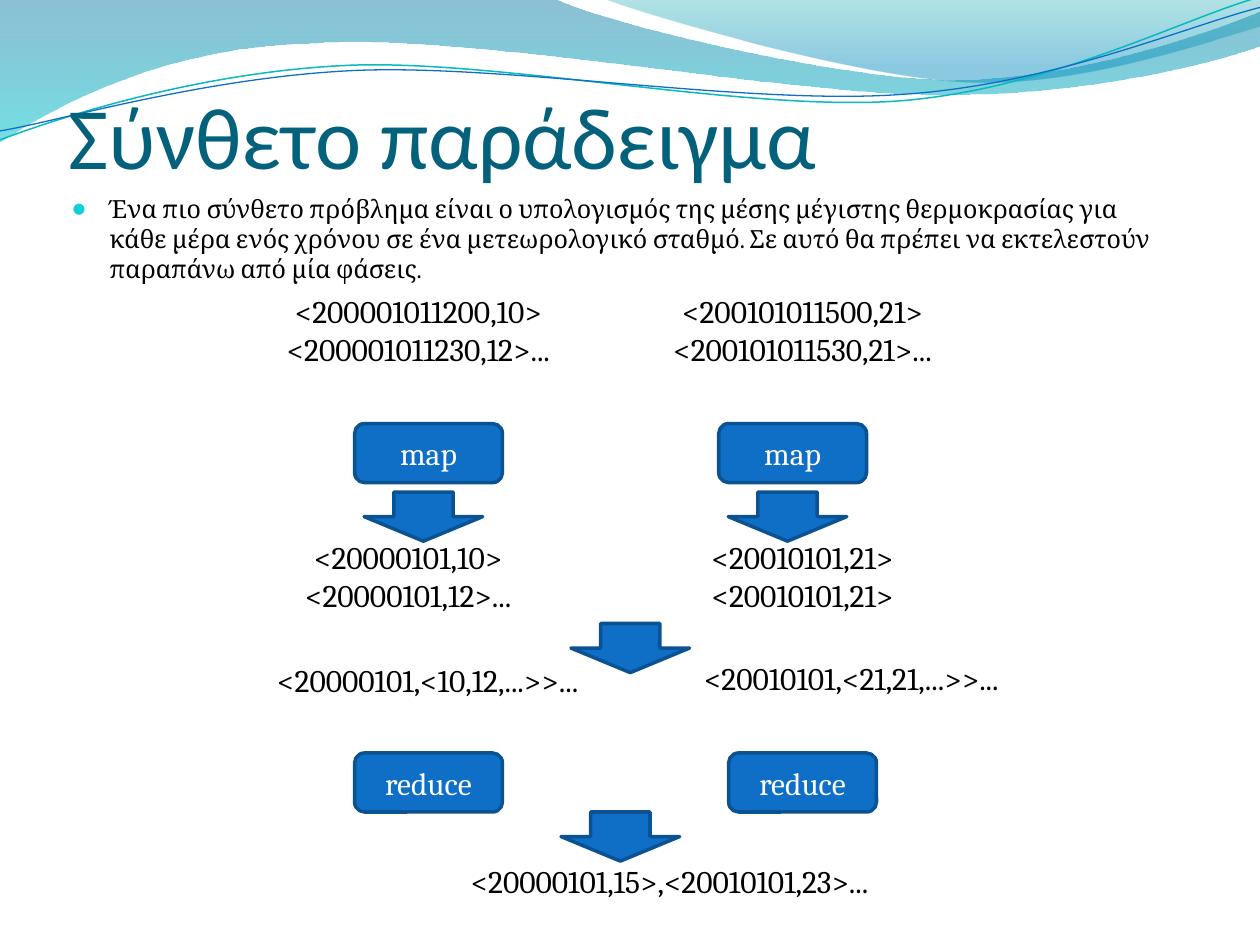
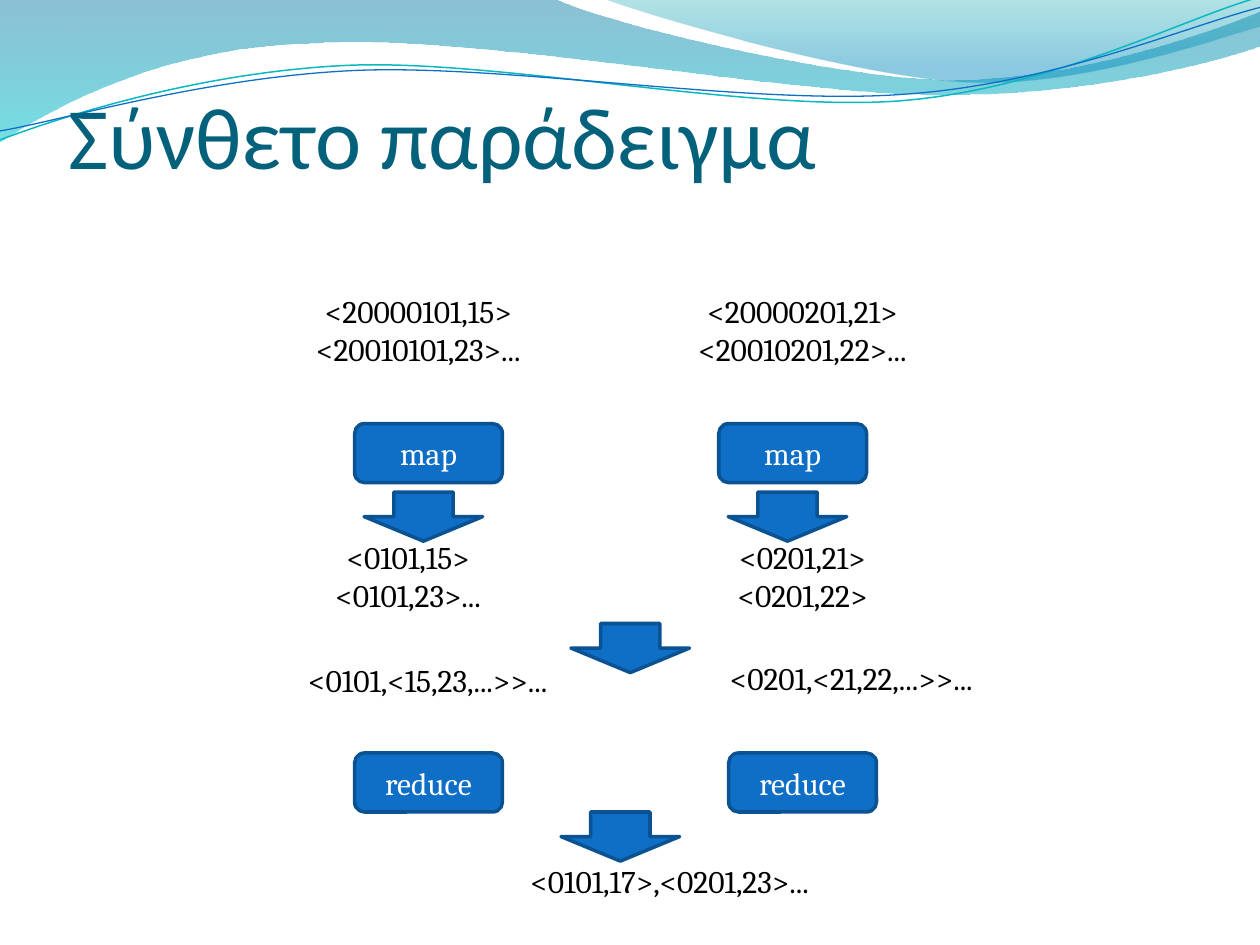
from typing import NamedTuple

from lxml.etree import SubElement
from pptx import Presentation
from pptx.dml.color import RGBColor
from pptx.enum.shapes import MSO_SHAPE as Preset
from pptx.enum.text import MSO_ANCHOR as Anchor, MSO_AUTO_SIZE as AutoSize, PP_ALIGN as Align
from pptx.oxml import parse_xml
from pptx.oxml.ns import nsdecls, qn
from pptx.util import Cm, Pt

BLUE, DARK_BLUE, AQUA, BULLET = "0F6FC6", "0B5292", "0AB8BF", "0BD0D9"
TITLE_COLOUR, BLACK, WHITE = "04617B", "000000", "FFFFFF"
TITLE_FONT, BODY_FONT = "Calibri", "Cambria"
STRAND_ROTATION = 357.3
TITLE = "Σύνθετο παράδειγμα"
INTRO = (
    "Ένα πιο σύνθετο πρόβλημα είναι ο υπολογισμός της μέσης μέγιστης θερμοκρασίας "
    "για κάθε μέρα ενός χρόνου σε ένα μετεωρολογικό σταθμό. Σε αυτό θα πρέπει να "
    "εκτελεστούν παραπάνω από μία φάσεις."
)


class Box(NamedTuple):
    """Hold a place in centimetres."""
    left: float
    top: float
    width: float
    height: float

    def inner(self, left, top, width, height):
        """Return a box placed relative to this one."""
        return Box(self.left + left, self.top + top, width, height)

    def lengths(self):
        """Return the four lengths for python-pptx."""
        return [Cm(length) for length in self]


BAND_BOX = Box(0, 0, 25.4, 2.87)
TITLE_BOX = Box(1.39, 0.6, 22.86, 3.18)
INTRO_BOX = Box(1.2, 3.77, 22.86, 1.78)
FLOW_BOX = Box(2.77, 5.77, 19.86, 12.5)

WAVES = [
    ((0, 0), [
        [(11.18, -0.03)],
        [(12.09, 0.43), (16.87, 1.6), (19.25, 1.6)],
        [(21.67, 1.6), (24.33, 0.66), (25.4, 0.23)],
        [(25.43, 0.91)],
        [(24.97, 1.12), (22.1, 1.93), (18.95, 1.91)],
        [(15.8, 1.91), (9.7, 0.71), (6.53, 0.86)],
        [(3.28, 0.91), (1.17, 2.11), (-0.03, 2.87)],
        [(0, 0)],
    ], [(0, "0074A1", 45), (100, "00C6CF", 55)]),
    ((12.17, -0.03), [
        [(12.93, 0.28), (17.32, 1.57), (19.53, 1.65)],
        [(21.74, 1.75), (24.41, 0.81), (25.4, 0.53)],
        [(25.4, 0)],
        [(12.17, -0.03)],
    ], [(0, "00A1A9", 30), (80, "008BBF", 45)]),
]
STRANDS = [
    ((-0.05, 2.22), [
        [(1.19, 1.82), (4.02, 1.04), (7.05, 1.05)],
        [(10.05, 1.07), (15.02, 2.37), (18.08, 2.29)],
        [(21.13, 2.2), (23.86, 0.91), (25.41, 0.55)],
    ], AQUA, 0.85),
    ((-0.04, 2.04), [
        [(1.16, 1.9), (4.17, 1.15), (7.2, 1.16)],
        [(10.25, 1.18), (15.13, 2.25), (18.19, 2.16)],
        [(21.22, 2.1), (23.93, 1.06), (25.45, 0.75)],
    ], BLUE, 0.75),
]

PAIR_PLACES = {
    "source left": (1.79, -0.01, 7.75, 1.8),
    "source right": (8.94, -0.01, 8.94, 1.8),
    "mapped left": (0, 4.95, 10.92, 1.8),
    "mapped right": (7.16, 4.95, 12.5, 1.8),
    "grouped left": (2.39, 7.43, 6.93, 1.02),
    "grouped right": (10.13, 7.39, 8.53, 1.02),
    "result": (1.6, 11.48, 18.26, 1.02),
}
STEPS = [("map", 4.38, 2.77), ("map", 11.72, 2.77), ("reduce", 4.38, 9.41), ("reduce", 11.92, 9.41)]
ARROWS = [(5.27, 3.45), (12.61, 3.45), (9.44, 6.1), (9.24, 9.9)]

YEARLY_PAIRS = {
    "source left": "<200001011200,10>\n<200001011230,12>...",
    "source right": "<200101011500,21>\n<200101011530,21>...",
    "mapped left": "<20000101,10>\n<20000101,12>...",
    "mapped right": "<20010101,21>\n<20010101,21>",
    "grouped left": "<20000101,<10,12,...>>...",
    "grouped right": "<20010101,<21,21,...>>...",
    "result": "<20000101,15>,<20010101,23>...",
}
DAILY_PAIRS = {
    "source left": "<20000101,15>\n<20010101,23>...",
    "source right": "<20000201,21>\n<20010201,22>...",
    "mapped left": "<0101,15>\n<0101,23>...",
    "mapped right": "<0201,21>\n<0201,22>",
    "grouped left": "<0101,<15,23,...>>...",
    "grouped right": "<0201,<21,22,...>>...",
    "result": "<0101,17>,<0201,23>...",
}


def colour(value):
    """Turn a hex string into a colour."""
    return RGBColor.from_string(value)


def write(shape, text, size, ink, font=BODY_FONT, align=Align.CENTER):
    """Fill a shape with formatted text."""
    frame = shape.text_frame
    frame.word_wrap = True
    frame.text = text
    for paragraph in frame.paragraphs:
        paragraph.alignment = align
        for run in paragraph.runs:
            run.font.name, run.font.size = font, Pt(size)
            run.font.color.rgb = colour(ink)
    return frame


def add_outline(slide, box, start, segments, close):
    """Draw a freeform of lines and Bézier curves inside the box."""
    def place(point):
        return Cm(box.left + point[0]), Cm(box.top + point[1])

    builder = slide.shapes.build_freeform(*place(start), scale=1.0)
    builder.add_line_segments([place(segment[-1]) for segment in segments], close)
    shape = builder.convert_to_shape()
    shape.shadow.inherit = False
    lines = list(shape._element.iter(qn("a:lnTo")))
    for line, segment in zip(lines, segments):
        if len(segment) == 3:
            line.clear()
            line.tag = qn("a:cubicBezTo")
            for x, y in map(place, segment):
                point = SubElement(line, qn("a:pt"))
                point.set("x", str(x - shape.left))
                point.set("y", str(y - shape.top))
    return shape


def fill_gradient(shape, stops):
    """Give a shape a translucent gradient from top to bottom."""
    shape.fill.solid()
    stop_xml = "".join(
        f'<a:gs pos="{position * 1000}"><a:srgbClr val="{value}">'
        f'<a:alpha val="{alpha * 1000}"/></a:srgbClr></a:gs>'
        for position, value, alpha in stops)
    gradient = parse_xml(
        f'<a:gradFill {nsdecls("a")}><a:gsLst>{stop_xml}</a:gsLst>'
        '<a:lin ang="5400000" scaled="0"/></a:gradFill>')
    properties = shape._element.spPr
    properties.replace(properties.find(qn("a:solidFill")), gradient)


def add_band(slide, box):
    """Draw the waves and strands and return them."""
    shapes = []
    for start, segments, stops in WAVES:
        wave = add_outline(slide, box, start, segments, True)
        fill_gradient(wave, stops)
        wave.line.fill.background()
        shapes.append(wave)
    for start, segments, ink, width in STRANDS:
        strand = add_outline(slide, box, start, segments, False)
        strand.rotation = STRAND_ROTATION
        strand.fill.background()
        strand.line.color.rgb = colour(ink)
        strand.line.width = Pt(width)
        shapes.append(strand)
    return shapes


def share_on_master(presentation, shapes):
    """Move shapes to the back of the slide master."""
    tree = presentation.slide_master.shapes._spTree
    for index, shape in enumerate(shapes):
        element = shape._element
        element.nvSpPr.cNvPr.set("id", str(100 + index))
        tree.insert(2 + index, element)


def add_title(slide, box):
    """Write the slide title."""
    frame = write(slide.shapes.add_textbox(*box.lengths()), TITLE, 50, TITLE_COLOUR, TITLE_FONT, Align.LEFT)
    frame.vertical_anchor = Anchor.BOTTOM
    frame.margin_left = frame.margin_right = frame.margin_bottom = 0


def add_intro(slide, box):
    """Write the bulleted introduction."""
    frame = write(slide.shapes.add_textbox(*box.lengths()), INTRO, 14.3, BLACK, align=Align.LEFT)
    paragraph = frame.paragraphs[0]
    paragraph.space_before = Pt(2.86)
    properties = paragraph._p.get_or_add_pPr()
    properties.set("marL", str(Cm(0.76)))
    properties.set("indent", str(-Cm(0.76)))
    SubElement(SubElement(properties, qn("a:buClr")), qn("a:srgbClr")).set("val", BULLET)
    SubElement(properties, qn("a:buSzPct")).set("val", "95000")
    SubElement(properties, qn("a:buFont")).set("typeface", TITLE_FONT)
    SubElement(properties, qn("a:buChar")).set("char", "●")


def add_block(slide, preset, box):
    """Draw a blue preset shape."""
    shape = slide.shapes.add_shape(preset, *box.lengths())
    shape.shadow.inherit = False
    shape.fill.solid()
    shape.fill.fore_color.rgb = colour(BLUE)
    shape.line.color.rgb = colour(DARK_BLUE)
    shape.line.width = Pt(2)
    return shape


def add_flow(slide, box, pairs):
    """Draw the map and reduce flow with its key-value pairs."""
    for label, left, top in STEPS:
        step = add_block(slide, Preset.ROUNDED_RECTANGLE, box.inner(left, top, 2.98, 1.19))
        write(step, label, 18, WHITE).vertical_anchor = Anchor.MIDDLE
    for left, top in ARROWS:
        add_block(slide, Preset.RIGHT_ARROW, box.inner(left, top, 0.99, 2.39)).rotation = 90
    for stage, text in pairs.items():
        text_box = slide.shapes.add_textbox(*box.inner(*PAIR_PLACES[stage]).lengths())
        write(text_box, text, 18, BLACK).auto_size = AutoSize.SHAPE_TO_FIT_TEXT


def add_example_slide(presentation, pairs, has_intro):
    """Build one example slide."""
    slide = presentation.slides.add_slide(presentation.slide_layouts[6])
    add_title(slide, TITLE_BOX)
    if has_intro:
        add_intro(slide, INTRO_BOX)
    add_flow(slide, FLOW_BOX, pairs)
    return slide


def main():
    """Build and save the presentation."""
    presentation = Presentation()
    presentation.slide_width, presentation.slide_height = Cm(25.4), Cm(19.05)
    first_slide = add_example_slide(presentation, YEARLY_PAIRS, True)
    add_example_slide(presentation, DAILY_PAIRS, False)
    share_on_master(presentation, add_band(first_slide, BAND_BOX))
    presentation.save("out.pptx")


if __name__ == "__main__":
    main()
